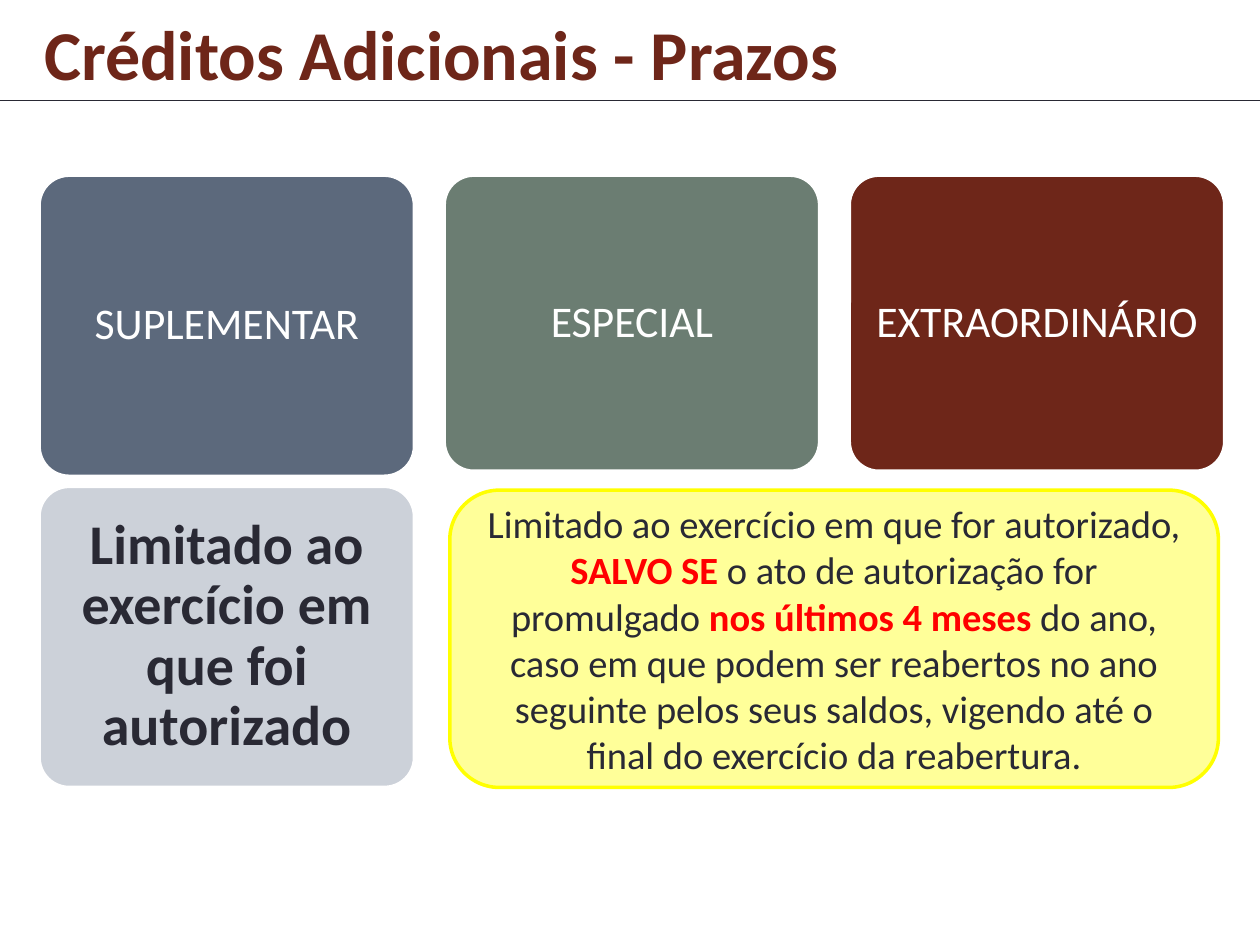
import pptx
import pptx.util
import pptx.dml.color
import pptx.enum.shapes
import pptx.enum.text
import pptx.oxml.ns
from lxml import etree

INK, WHITE, MAROON, RED = "292934", "FFFFFF", "6E2619", "FF0000"
TITLE = "Créditos Adicionais - Prazos"
HEADERS = [
    ("SUPLEMENTAR", "5C697C", 2.39),
    ("ESPECIAL", "6B7D72", 2.35),
    ("EXTRAORDINÁRIO", MAROON, 2.35),
]
LIMIT = "Limitado ao exercício em que foi autorizado"
EXCEPTION = [
    ("Limitado ao exercício em que for autorizado, ", False),
    ("SALVO SE ", True),
    ("o ato de autorização for promulgado ", False),
    ("nos últimos 4 meses ", True),
    ("do ano, caso em que podem ser reabertos no ano seguinte pelos seus "
     "saldos, vigendo até o final do exercício da reabertura.", False),
]
LEFT, TOP, LOWER_TOP = 0.31, 1.39, 3.86
CARD_W, CARD_H, COLUMN_STEP = 2.98, 2.39, 3.215

Inches, Pt = pptx.util.Inches, pptx.util.Pt
SHAPE = pptx.enum.shapes.MSO_SHAPE
ALIGN = pptx.enum.text.PP_ALIGN
ANCHOR = pptx.enum.text.MSO_ANCHOR


def color(value):
    return pptx.dml.color.RGBColor.from_string(value)


def add_run(p, text, size, ink, bold=False):
    r = p.add_run()
    r.text = text
    for name, value in dict(name="Calibri", size=Pt(size), bold=bold).items():
        setattr(r.font, name, value)
    r.font.color.rgb = color(ink)


def add_card(kind, box, fill, outline, runs, inset=None, spacing=None):
    s = slide.shapes.add_shape(kind, *map(Inches, box))
    s.shadow.inherit = False
    s.fill.solid()
    s.fill.fore_color.rgb = color(fill)
    s.line.color.rgb = color(outline)
    s.line.width = Pt(2)
    tf = s.text_frame
    tf.word_wrap = True
    tf.vertical_anchor = ANCHOR.MIDDLE
    if inset:
        s.adjustments[0] = 0.1
        for side in ("left", "right", "top", "bottom"):
            setattr(tf, f"margin_{side}", Inches(inset))
    p = tf.paragraphs[0]
    p.alignment = ALIGN.CENTER
    if spacing:
        p.line_spacing = spacing
    for run in runs:
        add_run(p, *run)


prs = pptx.Presentation()
prs.slide_width, prs.slide_height = Inches(10), Inches(7.5)
slide = prs.slides.add_slide(prs.slide_layouts[5])

rule = slide.shapes.add_connector(
    pptx.enum.shapes.MSO_CONNECTOR.STRAIGHT, 0, Inches(0.8), prs.slide_width, Inches(0.8))
rule.line.color.rgb = color(INK)
rule.line.width = Pt(0.75)
etree.SubElement(rule._element.spPr, pptx.oxml.ns.qn("a:effectLst"))

title = slide.shapes.title
for name, value in dict(left=0.25, top=0.03, width=6.58, height=0.77).items():
    setattr(title, name, Inches(value))
tf = title.text_frame
tf.word_wrap = False
tf.auto_size = pptx.enum.text.MSO_AUTO_SIZE.NONE
tf.vertical_anchor = ANCHOR.TOP
tf.paragraphs[0].alignment = ALIGN.LEFT
add_run(tf.paragraphs[0], TITLE, 40, MAROON, True)

for column, (label, fill, height) in enumerate(HEADERS):
    add_card(SHAPE.ROUNDED_RECTANGLE, (LEFT + column * COLUMN_STEP, TOP, CARD_W, height),
             fill, WHITE, [(label, 25, WHITE)], 0.1, 0.9)
add_card(SHAPE.ROUNDED_RECTANGLE, (LEFT, LOWER_TOP, CARD_W, CARD_H),
         "CCD1D9", WHITE, [(LIMIT, 32, INK, True)], 0.13, 0.9)
add_card(SHAPE.FLOWCHART_ALTERNATE_PROCESS, (3.57, 3.89, 6.1, 2.36), "FFFF99", "FFFF00",
         [(text, 22, RED if strong else INK, strong) for text, strong in EXCEPTION])

prs.save("out.pptx")
